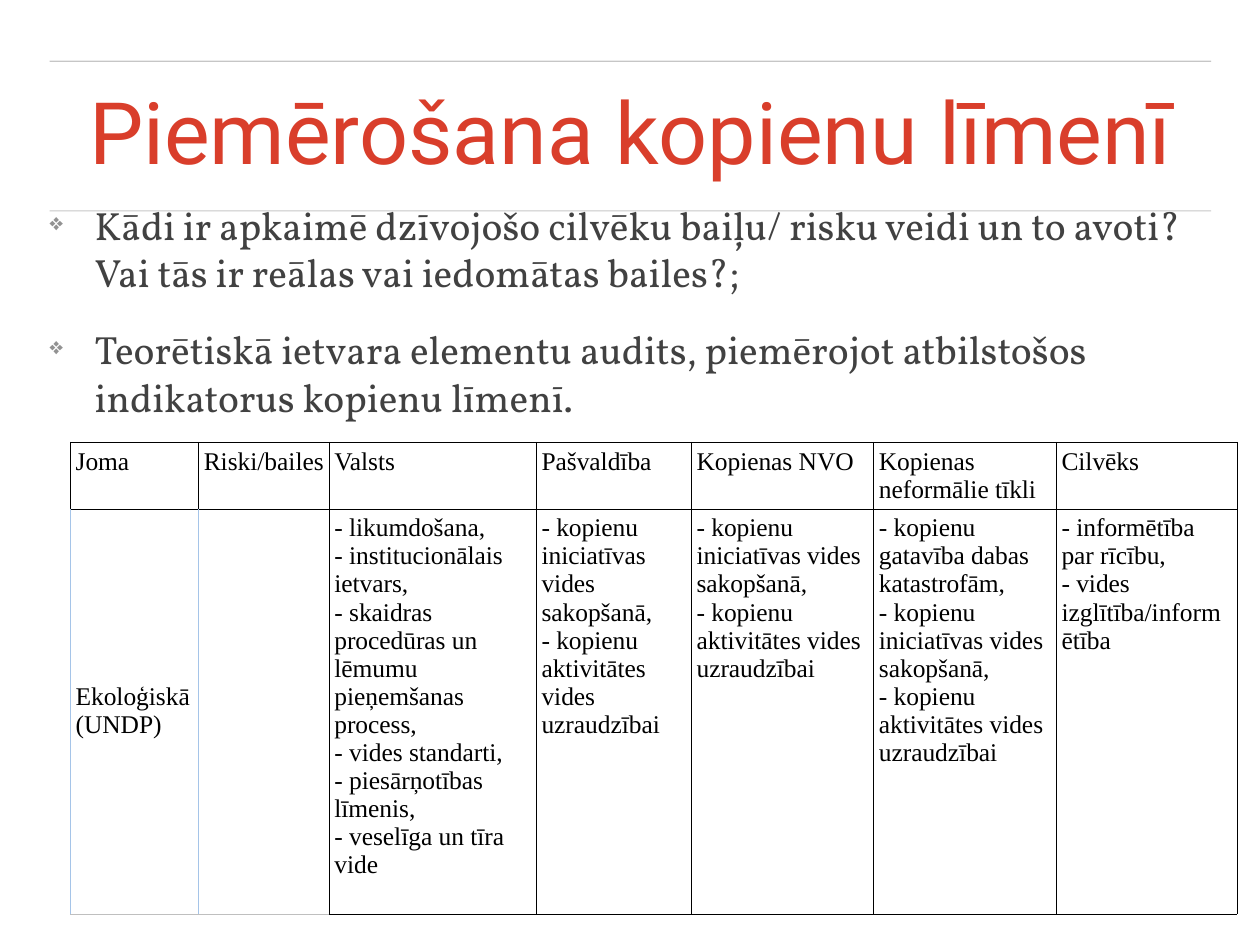
from lxml import etree
from pptx import Presentation
from pptx.dml.color import RGBColor
from pptx.enum.shapes import MSO_CONNECTOR
from pptx.enum.text import MSO_ANCHOR, MSO_AUTO_SIZE, PP_ALIGN
from pptx.oxml.ns import qn
from pptx.util import Pt

STRAIGHT = MSO_CONNECTOR.STRAIGHT
MIDDLE = MSO_ANCHOR.MIDDLE
TOP = MSO_ANCHOR.TOP
NO_AUTOFIT = MSO_AUTO_SIZE.NONE
CENTER = PP_ALIGN.CENTER
LEFT = PP_ALIGN.LEFT

# Content
TITLE = "Piemērošana kopienu līmenī"
QUESTIONS = [
    "Kādi ir apkaimē dzīvojošo cilvēku baiļu/ risku veidi un to avoti? "
    "Vai tās ir reālas vai iedomātas bailes?;",
    "Teorētiskā ietvara elementu audits, piemērojot atbilstošos "
    "indikatorus kopienu līmenī.",
]
COMMUNITY_ITEMS = [
    "- kopienu iniciatīvas vides sakopšanā,",
    "- kopienu aktivitātes vides uzraudzībai",
]
# Each column: width, heading, lines of the ecological row
COLUMNS = [
    (104.2, "Joma", ["Ekoloģiskā (UNDP)"]),
    (106.1, "Riski/bailes", []),
    (168.4, "Valsts", [
        "- likumdošana,",
        "- institucionālais ietvars,",
        "- skaidras procedūras un lēmumu pieņemšanas process,",
        "- vides standarti,",
        "- piesārņotības līmenis,",
        "- veselīga un tīra vide",
    ]),
    (126, "Pašvaldība", COMMUNITY_ITEMS),
    (148.2, "Kopienas NVO", COMMUNITY_ITEMS),
    (148.4, "Kopienas neformālie tīkli",
     ["- kopienu gatavība dabas katastrofām,"] + COMMUNITY_ITEMS),
    (146.9, "Cilvēks", ["- informētība par rīcību,", "- vides izglītība/informētība"]),
]
COLORS = {
    "title": "D93E2B", "body": "414141", "bullet": "929292", "rule": "444444",
    "table": "000000", "side": "A5C4E8", "base": "BFBFBF",
}

# Layout
MARGIN, CONTENT_WIDTH = 40.3, 944
RULE_TOPS = (49.7, 171.4)
TABLE_LEFT, TABLE_TOP = 57.2, 359.4
ROW_HEIGHTS = (53.6, 329)
CELL_INSET = 4.3


def color(name):
    return RGBColor.from_string(COLORS[name])


def set_font(paragraph, name, size, color_name):
    paragraph.font.name = name
    paragraph.font.size = Pt(size)
    paragraph.font.color.rgb = color(color_name)


def prepare_frame(frame):
    frame.word_wrap = True
    frame.auto_size = NO_AUTOFIT
    frame.vertical_anchor = MIDDLE
    frame.margin_left = frame.margin_right = 0
    frame.margin_top = frame.margin_bottom = 0


def add_rule(slide, top):
    rule = slide.shapes.add_connector(
        STRAIGHT, Pt(MARGIN), Pt(top), Pt(MARGIN + CONTENT_WIDTH), Pt(top))
    rule.line.width = Pt(1)
    rule.line.color.rgb = color("rule")
    properties = rule._element.spPr
    shade = properties.find(".//" + qn("a:srgbClr"))
    etree.SubElement(shade, qn("a:alpha"), val="30000")
    etree.SubElement(properties, qn("a:effectLst"))


def add_bullet(paragraph):
    properties = paragraph._p.get_or_add_pPr()
    properties.set("marL", str(Pt(36.7)))
    properties.set("indent", str(-Pt(36.7)))
    bullet_color = etree.SubElement(properties, qn("a:buClr"))
    etree.SubElement(bullet_color, qn("a:srgbClr"), val=COLORS["bullet"])
    etree.SubElement(properties, qn("a:buSzPct"), val="60000")
    etree.SubElement(properties, qn("a:buChar"), char="❖")


def set_borders(cell, border_colors):
    properties = cell._tc.get_or_add_tcPr()
    for position, (side, name) in enumerate(border_colors.items()):
        line = etree.Element(qn("a:ln" + side), w=str(Pt(0.5)))
        fill = etree.SubElement(line, qn("a:solidFill"))
        etree.SubElement(fill, qn("a:srgbClr"), val=COLORS[name])
        properties.insert(position, line)


def fill_cell(cell, lines, border_colors, anchor):
    cell.margin_left = cell.margin_right = Pt(CELL_INSET)
    cell.margin_top = cell.margin_bottom = Pt(CELL_INSET)
    cell.vertical_anchor = anchor
    cell.fill.background()
    set_borders(cell, border_colors)
    cell.text = "\n".join(lines)
    for paragraph in cell.text_frame.paragraphs:
        set_font(paragraph, "Times New Roman", 20.7, "table")


def add_title(slide):
    title = slide.shapes.title
    title.left, title.top = Pt(MARGIN), Pt(63.4)
    title.width, title.height = Pt(CONTENT_WIDTH), Pt(95.8)
    title.text = TITLE
    prepare_frame(title.text_frame)
    paragraph = title.text_frame.paragraphs[0]
    paragraph.alignment = CENTER
    paragraph.line_spacing = 0.9
    set_font(paragraph, "Roboto", 70, "title")


def add_questions(slide):
    box = slide.shapes.add_textbox(Pt(MARGIN), Pt(31), Pt(CONTENT_WIDTH), Pt(442.8))
    frame = box.text_frame
    prepare_frame(frame)
    frame.text = "\n".join(QUESTIONS)
    for index, paragraph in enumerate(frame.paragraphs):
        paragraph.alignment = LEFT
        paragraph.space_before = Pt(24 if index else 0)
        add_bullet(paragraph)
        set_font(paragraph, "Vollkorn", 32, "body")


def add_indicator_table(slide):
    table_width = sum(width for width, _, _ in COLUMNS)
    table = slide.shapes.add_table(
        len(ROW_HEIGHTS), len(COLUMNS), Pt(TABLE_LEFT), Pt(TABLE_TOP),
        Pt(table_width), Pt(sum(ROW_HEIGHTS))).table
    for row, height in zip(table.rows, ROW_HEIGHTS):
        row.height = Pt(height)
    black = dict.fromkeys("LRTB", "table")
    for index, (width, heading, lines) in enumerate(COLUMNS):
        table.columns[index].width = Pt(width)
        fill_cell(table.cell(0, index), [heading], black, TOP)
        # The first two cells of the ecological row have pale edges
        borders = dict(black)
        if index < 2:
            borders.update(L="side", B="base")
        if index == 0:
            borders["R"] = "side"
        fill_cell(table.cell(1, index), lines, borders, TOP if index else MIDDLE)


def main():
    presentation = Presentation()
    presentation.slide_width, presentation.slide_height = Pt(1024), Pt(768)
    slide = presentation.slides.add_slide(presentation.slide_layouts[5])
    for top in RULE_TOPS:
        add_rule(slide, top)
    add_title(slide)
    add_questions(slide)
    add_indicator_table(slide)
    presentation.save("out.pptx")


if __name__ == "__main__":
    main()
